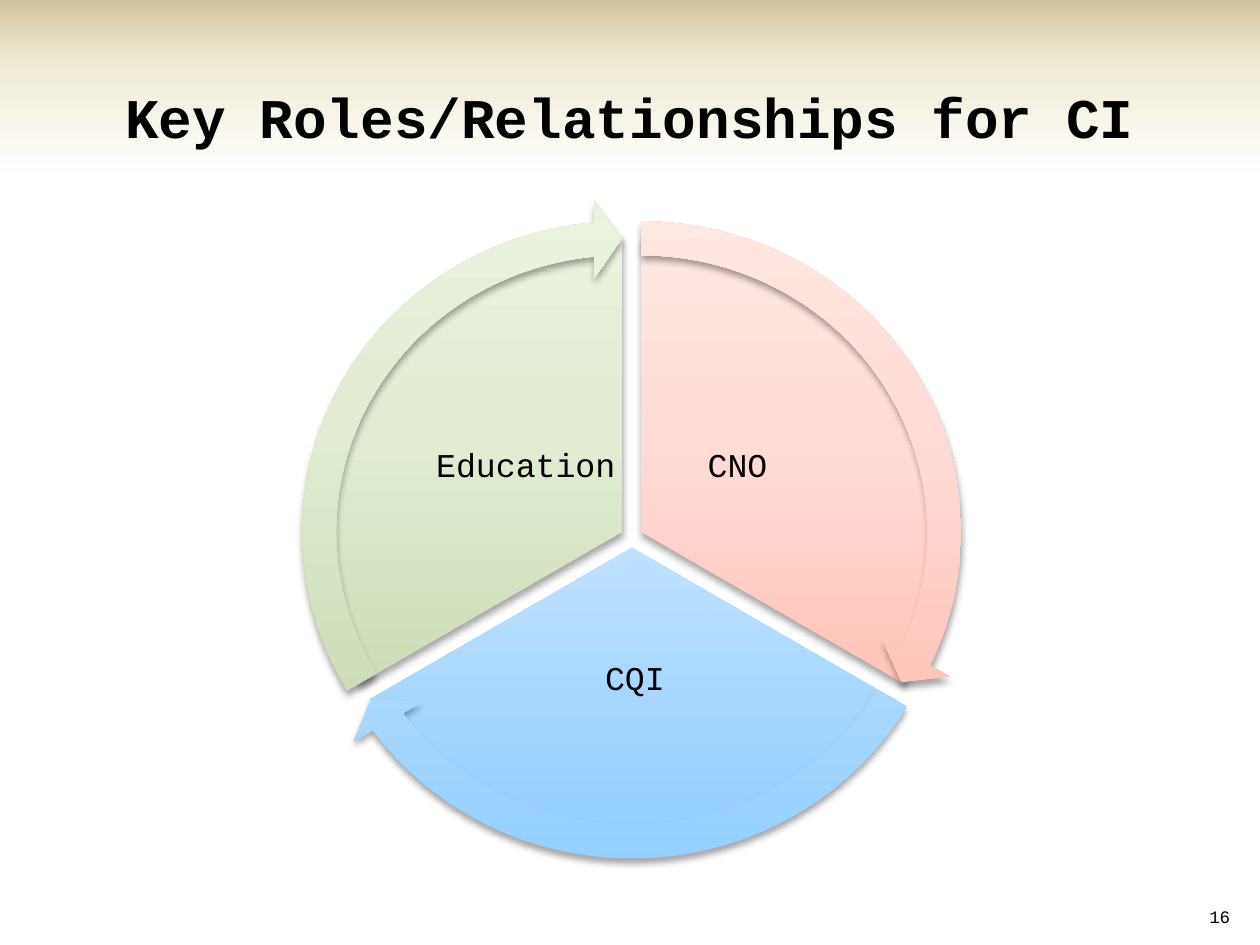
from copy import deepcopy
from dataclasses import dataclass

from lxml.etree import SubElement
from pptx import Presentation
from pptx.dml.color import RGBColor
from pptx.enum.shapes import MSO_SHAPE
from pptx.enum.text import MSO_ANCHOR, PP_ALIGN
from pptx.oxml.ns import qn
from pptx.shapes.autoshape import Shape
from pptx.slide import Slide
from pptx.util import Cm, Pt

FONT = "Courier New"
BLACK = RGBColor(0x00, 0x00, 0x00)
Gradient = tuple[RGBColor, RGBColor, RGBColor]
BANNER: Gradient = (RGBColor(0xFF, 0xFF, 0xFF), RGBColor(0xF0, 0xEB, 0xD5), RGBColor(0xD1, 0xC3, 0x9F))
RED: Gradient = (RGBColor(0xFF, 0xB4, 0xA4), RGBColor(0xFF, 0xDC, 0xD6), RGBColor(0xFF, 0xE7, 0xE2))
BLUE: Gradient = (RGBColor(0x91, 0xCE, 0xFF), RGBColor(0xCC, 0xE7, 0xFF), RGBColor(0xDC, 0xEE, 0xFF))
GREEN: Gradient = (RGBColor(0xBE, 0xD2, 0xA4), RGBColor(0xE1, 0xEC, 0xD2), RGBColor(0xEA, 0xF3, 0xDE))
STOPS = (0, 0.65, 1)

PIE_SIZE = (12.27, 11.94)
ARROW_SIZE = (13.79, 13.41)
SWEEP = 120
HEAD_ANGLE = 5.46
ANGLE_UNIT = 0.6  # adjustment value per degree


@dataclass(frozen=True)
class Role:
    """A third of the cycle; lengths in cm, start in degrees clockwise from east."""
    label: str
    center: tuple[float, float]
    start: int
    label_shift: tuple[float, float]
    colors: Gradient


ROLES = (
    Role("CNO", (12.93, 10.72), 270, (1.94, -1.32), RED),
    Role("CQI", (12.74, 11.05), 30, (0.06, 2.65), BLUE),
    Role("Education", (12.54, 10.72), 150, (-1.94, -1.32), GREEN),
)


def paint(sp: Shape, colors: Gradient) -> None:
    """Fill from bottom to top, with no outline and no shadow."""
    sp.fill.gradient()
    sp.fill.gradient_angle = 90
    stop_list = next(sp._element.spPr.iter(qn("a:gsLst")))
    stop_list.insert(1, deepcopy(stop_list[0]))
    for stop, position, color in zip(sp.fill.gradient_stops, STOPS, colors):
        stop.position = position
        stop.color.rgb = color
    sp.line.fill.background()
    sp.shadow.inherit = False


def add_soft_shadow(sp: Shape) -> None:
    effects = sp._element.spPr.find(qn("a:effectLst"))
    shadow = SubElement(effects, qn("a:outerShdw"), blurRad=str(Pt(4)), dist=str(Pt(3)),
                        dir="5400000", rotWithShape="0")
    color = SubElement(shadow, qn("a:srgbClr"), val=str(BLACK))
    SubElement(color, qn("a:alpha"), val="35000")


def write(sp: Shape, text: str, size: int, align: PP_ALIGN, anchor: MSO_ANCHOR, bold: bool = False) -> None:
    tf = sp.text_frame
    tf.text = text
    tf.word_wrap = True
    tf.vertical_anchor = anchor
    p = tf.paragraphs[0]
    p.alignment = align
    font = p.runs[0].font
    font.name, font.size, font.bold = FONT, Pt(size), bold
    font.color.rgb = BLACK


def add_centered(s: Slide, kind: MSO_SHAPE, role: Role, size: tuple[float, float]) -> Shape:
    (cx, cy), (w, h) = role.center, size
    sp = s.shapes.add_shape(kind, Cm(cx - w / 2), Cm(cy - h / 2), Cm(w), Cm(h))
    paint(sp, role.colors)
    add_soft_shadow(sp)
    return sp


def add_role(s: Slide, role: Role) -> None:
    end = (role.start + SWEEP) % 360
    pie = add_centered(s, MSO_SHAPE.PIE, role, PIE_SIZE)
    pie.adjustments[0] = role.start * ANGLE_UNIT
    pie.adjustments[1] = end * ANGLE_UNIT
    write(pie, role.label, 19, PP_ALIGN.CENTER, MSO_ANCHOR.MIDDLE)
    tf = pie.text_frame
    tf.paragraphs[0].line_spacing = 0.9
    dx, dy = role.label_shift
    tf.margin_left, tf.margin_right = Cm(max(0, 2 * dx)), Cm(max(0, -2 * dx))
    tf.margin_top, tf.margin_bottom = Cm(max(0, 2 * dy)), Cm(max(0, -2 * dy))

    arrow = add_centered(s, MSO_SHAPE.CIRCULAR_ARROW, role, ARROW_SIZE)
    values = (0.051, HEAD_ANGLE * ANGLE_UNIT, (end - HEAD_ANGLE) * ANGLE_UNIT,
              role.start * ANGLE_UNIT, 0.059)
    for i, value in enumerate(values):
        arrow.adjustments[i] = value


def main() -> None:
    prs = Presentation()
    prs.slide_width, prs.slide_height = Cm(25.4), Cm(19.05)
    s = prs.slides.add_slide(prs.slide_layouts[6])

    banner = s.shapes.add_shape(MSO_SHAPE.RECTANGLE, 0, 0, prs.slide_width, Cm(3.6))
    paint(banner, BANNER)

    number = s.shapes.add_textbox(Cm(24.03), Cm(17.8), Cm(1.02), Cm(1.02))
    write(number, "16", 10, PP_ALIGN.RIGHT, MSO_ANCHOR.BOTTOM)

    title = s.shapes.add_textbox(0, Cm(0.76), prs.slide_width, Cm(3.18))
    write(title, "Key Roles/Relationships for CI", 32, PP_ALIGN.CENTER, MSO_ANCHOR.MIDDLE, bold=True)

    for role in ROLES:
        add_role(s, role)

    prs.save("out.pptx")


if __name__ == "__main__":
    main()
